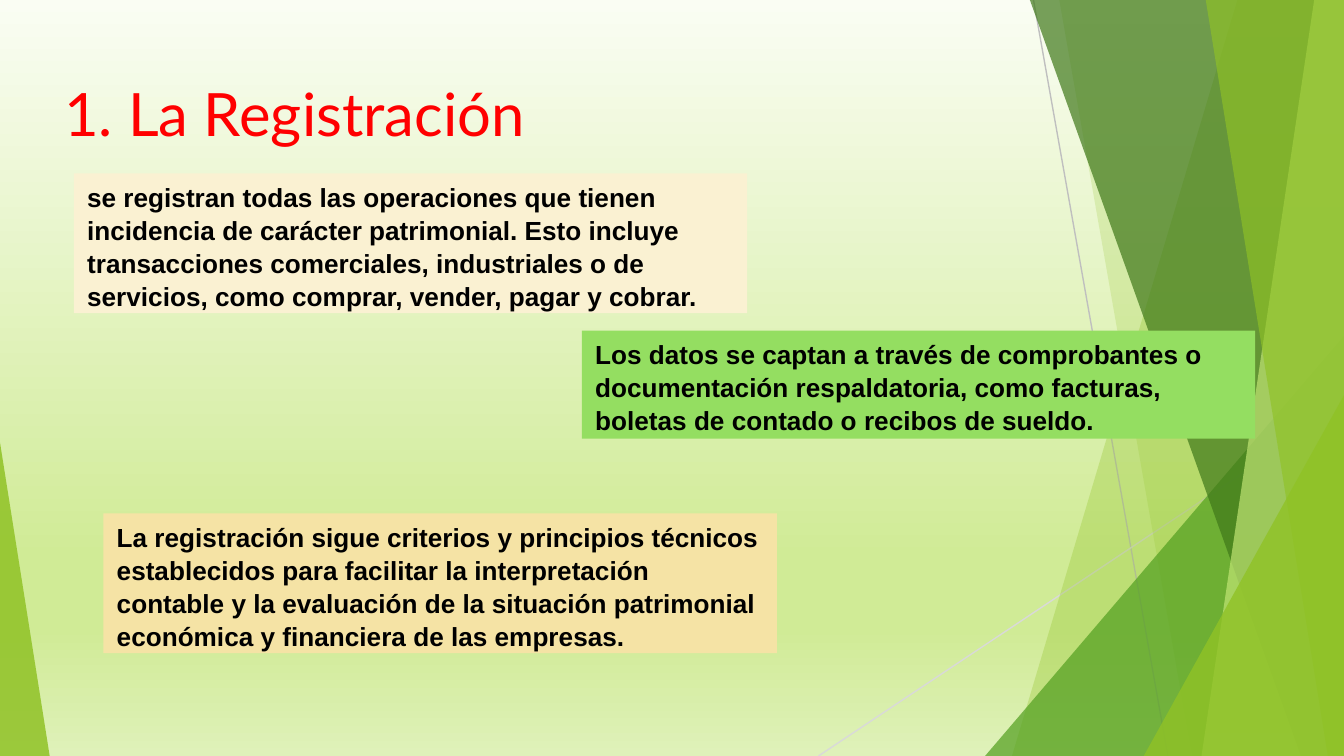
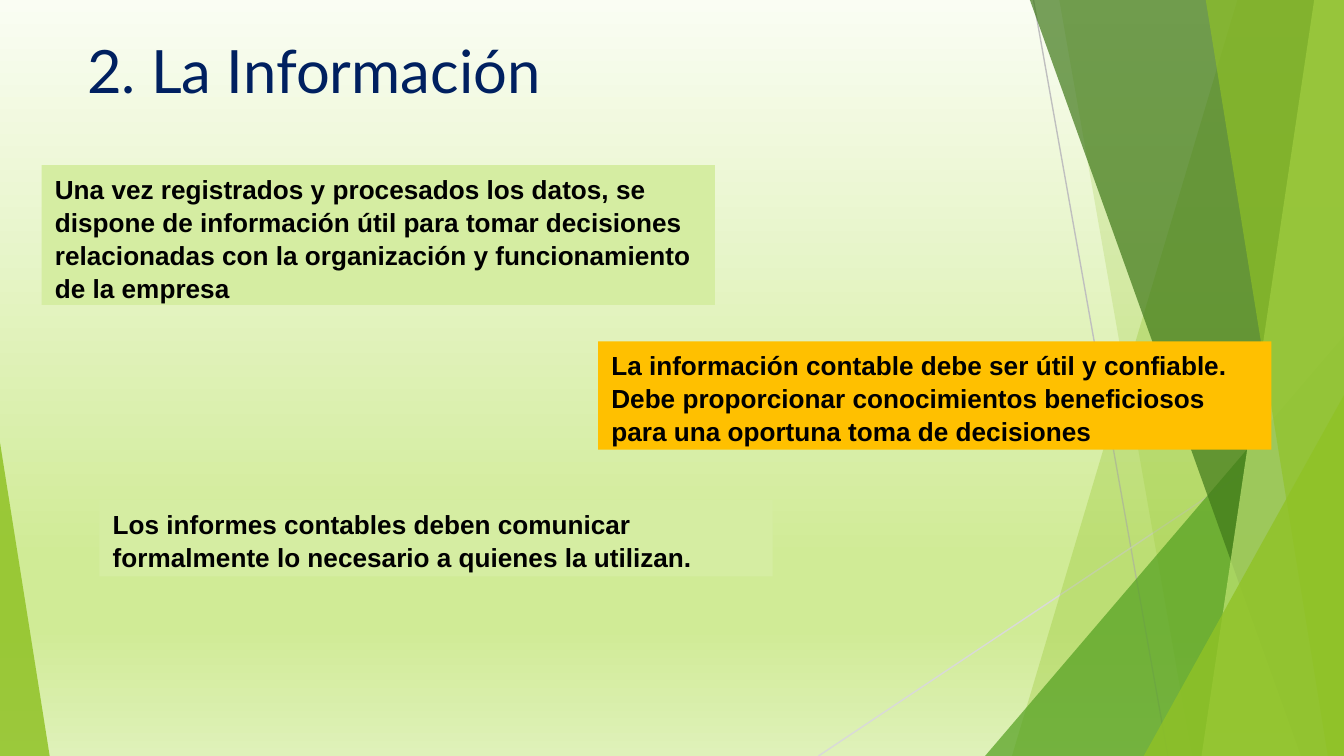
from dataclasses import dataclass

from lxml import etree
from pptx import Presentation
from pptx import util as u
from pptx.dml import color
from pptx.enum import shapes, text
from pptx.oxml import ns


@dataclass(frozen=True)
class Theme:
    leaf: str = "90C226"
    grass: str = "54A021"
    forest: str = "3F7819"
    lime: str = "C0E474"
    silver: str = "BFBFBF"
    mist: str = "D9D9D9"
    red: str = "FF0000"
    navy: str = "002060"
    ink: str = "000000"
    cream: str = "FAF1D2"
    sand: str = "F5E3A5"
    mint: str = "94DE61"
    pale: str = "D5EDA2"
    amber: str = "FFC000"
    backdrop: tuple = ((0, "FAFDF3"), (74, "D0EB96"), (83, "D0EB96"), (100, "DFF1B9"))
    title_font: str = "Lato"
    body_font: str = "Arial"
    title_size: float = 32
    body_size: float = 14
    body_spacing: float = 1.05
    hairline: float = 0.75


COLS, ROWS = 100, 56.25
BOX_COLS = 50.1
LINE_ROWS, PADDING_ROWS = 2.35, 1


class Deck:
    def __init__(self, theme):
        self.theme = theme
        self.prs = Presentation()
        self.prs.slide_width = u.Inches(10)
        self.prs.slide_height = u.Inches(5.625)
        self.slide = None

    def x(self, cols):
        return round(self.prs.slide_width * cols / COLS)

    def y(self, rows):
        return round(self.prs.slide_height * rows / ROWS)

    def frame(self, left, top, width, height):
        return self.x(left), self.y(top), self.x(width), self.y(height)

    def add_slide(self):
        self.slide = self.prs.slides.add_slide(self.prs.slide_layouts[6])
        self.background()
        self.facets()

    def background(self):
        fill = self.slide.background.fill
        fill.gradient()
        fill.gradient_angle = 270
        stops = self.slide.element.find(".//" + ns.qn("a:gsLst"))
        for old in list(stops):
            stops.remove(old)
        for share, rgb in self.theme.backdrop:
            stop = etree.SubElement(stops, ns.qn("a:gs"), pos=str(share * 1000))
            etree.SubElement(stop, ns.qn("a:srgbClr"), val=rgb)

    def paint(self, sp, rgb, opacity=100):
        sp.shadow.inherit = False
        sp.line.fill.background()
        sp.fill.solid()
        sp.fill.fore_color.rgb = color.RGBColor.from_string(rgb)
        if opacity < 100:
            clr = sp.element.spPr.find(".//" + ns.qn("a:srgbClr"))
            etree.SubElement(clr, ns.qn("a:alpha"), val=str(opacity * 1000))

    def line(self, group, start, end, rgb):
        sp = group.shapes.add_connector(
            shapes.MSO_CONNECTOR.STRAIGHT,
            self.x(start[0]), self.y(start[1]), self.x(end[0]), self.y(end[1]),
        )
        sp.line.color.rgb = color.RGBColor.from_string(rgb)
        sp.line.width = u.Pt(self.theme.hairline)
        etree.SubElement(sp.element.spPr, ns.qn("a:effectLst"))

    def band(self, group, top_col, bottom_col, rgb, opacity):
        top, bottom = self.y(-0.1), self.y(ROWS)
        pen = group.shapes.build_freeform(self.x(top_col), top)
        pen.add_line_segments(
            [(self.x(COLS), top), (self.x(COLS), bottom), (self.x(bottom_col), bottom)]
        )
        self.paint(pen.convert_to_shape(), rgb, opacity)

    def corner(self, group, left, top, width, apex, rgb, opacity):
        sp = group.shapes.add_shape(
            shapes.MSO_SHAPE.ISOSCELES_TRIANGLE, *self.frame(left, top, width, ROWS - top)
        )
        sp.adjustments[0] = apex
        self.paint(sp, rgb, opacity)

    def facets(self):
        t = self.theme
        group = self.slide.shapes.add_group_shape()
        self.line(group, (76.9, 0), (86.9, ROWS), t.silver)
        self.line(group, (COLS, 30.2), (60.9, ROWS), t.mist)
        self.band(group, 92.1, 75.3, t.leaf, 30)
        self.band(group, 78.8, 88.7, t.leaf, 20)
        self.corner(group, 73.3, 25, 26.7, 1, t.grass, 72)
        self.band(group, 76.6, 96.8, t.forest, 70)
        self.band(group, 97.8, 89.4, t.lime, 70)
        self.band(group, 89.7, 98.8, t.leaf, 65)
        self.corner(group, 85.1, 29.4, 14.9, 1, t.leaf, 80)
        self.corner(group, 0, 32.9, 3.7, 0, t.leaf, 85)

    def put_text(self, sp, words, font, size, rgb, bold=False, spacing=None):
        tf = sp.text_frame
        tf.text = words
        tf.word_wrap = True
        tf.auto_size = text.MSO_AUTO_SIZE.SHAPE_TO_FIT_TEXT
        tf.vertical_anchor = text.MSO_ANCHOR.TOP
        p = tf.paragraphs[0]
        p.alignment = text.PP_ALIGN.LEFT
        p.line_spacing = spacing
        r = p.runs[0]
        r.font.name = font
        r.font.size = u.Pt(size)
        r.font.bold = bold
        r.font.color.rgb = color.RGBColor.from_string(rgb)

    def title(self, left, top, width, words, rgb):
        sp = self.slide.shapes.add_textbox(*self.frame(left, top, width, 6.4))
        self.put_text(sp, words, self.theme.title_font, self.theme.title_size, rgb)

    def box(self, left, top, lines, rgb, words):
        t = self.theme
        height = PADDING_ROWS + lines * LINE_ROWS
        sp = self.slide.shapes.add_shape(
            shapes.MSO_SHAPE.RECTANGLE, *self.frame(left, top, BOX_COLS, height)
        )
        self.paint(sp, rgb)
        self.put_text(sp, words, t.body_font, t.body_size, t.ink, True, t.body_spacing)


def main():
    theme = Theme()
    deck = Deck(theme)

    deck.add_slide()
    deck.title(3.8, 5.2, 47, "1. La Registración", theme.red)
    deck.box(5.5, 12.9, 4, theme.cream,
             "se registran todas las operaciones que tienen incidencia de carácter "
             "patrimonial. Esto incluye transacciones comerciales, industriales o de "
             "servicios, como comprar, vender, pagar y cobrar.")
    deck.box(43.3, 24.6, 3, theme.mint,
             "Los datos se captan a través de comprobantes o documentación "
             "respaldatoria, como facturas, boletas de contado o recibos de sueldo.")
    deck.box(7.7, 38.2, 4, theme.sand,
             "La registración sigue criterios y principios técnicos establecidos para "
             "facilitar la interpretación contable y la evaluación de la situación "
             "patrimonial económica y financiera de las empresas.")

    deck.add_slide()
    deck.title(5.5, 2, 42.5, "2. La Información", theme.navy)
    deck.box(3.1, 12.3, 4, theme.pale,
             "Una vez registrados y procesados los datos, se dispone de información "
             "útil para tomar decisiones relacionadas con la organización y "
             "funcionamiento de la empresa")
    deck.box(44.5, 25.4, 3, theme.amber,
             "La información contable debe ser útil y confiable. Debe proporcionar "
             "conocimientos beneficiosos para una oportuna toma de decisiones")
    deck.box(7.4, 37.2, 2, theme.pale,
             "Los informes contables deben comunicar formalmente lo necesario a "
             "quienes la utilizan.")

    deck.prs.save("out.pptx")


if __name__ == "__main__":
    main()
